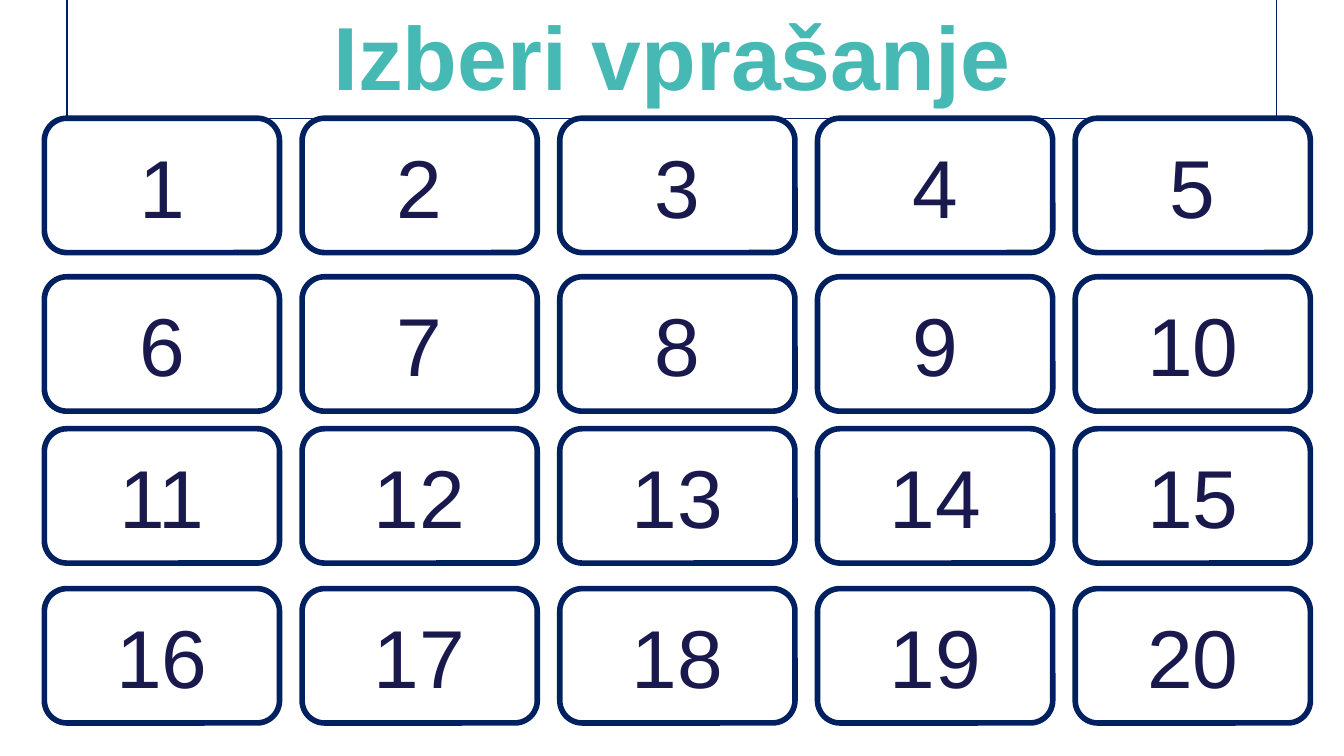
from pptx import Presentation
from pptx.dml.color import RGBColor
from pptx.enum.shapes import MSO_SHAPE
from pptx.enum.text import MSO_ANCHOR, PP_ALIGN
from pptx.util import Inches, Pt

COLUMNS = 5
FIRST_LEFT, LAST_LEFT = 0.33, 8
COLUMN_STEP = (LAST_LEFT - FIRST_LEFT) / (COLUMNS - 1)
ROW_TOPS = [0.88, 2.06, 3.19, 4.38]
CARD_WIDTH, CARD_HEIGHT = 1.75, 1


def color(value):
    return RGBColor.from_string(value)


class Board:
    font = "Arial"
    outline = "002060"
    title_format = {"size": Pt(48), "bold": True}
    title_color = "47B9B4"
    card_format = {"size": Pt(44), "bold": False}
    card_color = "19194D"

    def __init__(self, slide):
        self.slide = slide

    def box(self, kind, bounds, line_width, text, formats, text_color, wrap):
        """Add an unfilled, outlined shape with one centred line of text."""
        sp = self.slide.shapes.add_shape(kind, *map(Inches, bounds))
        sp.shadow.inherit = False
        sp.fill.background()
        sp.line.color.rgb = color(self.outline)
        sp.line.width = Pt(line_width)
        tf = sp.text_frame
        tf.word_wrap = wrap
        tf.vertical_anchor = MSO_ANCHOR.MIDDLE
        p = tf.paragraphs[0]
        p.alignment = PP_ALIGN.CENTER
        r = p.add_run()
        r.text = text
        r.font.name = self.font
        r.font.color.rgb = color(text_color)
        for name, value in formats.items():
            setattr(r.font, name, value)
        return sp

    def title(self, text):
        self.box(MSO_SHAPE.RECTANGLE, (0.5, -0.06, 9, 0.94), 0.75, text,
                 self.title_format, self.title_color, True)

    def card(self, left, top, number):
        sp = self.box(MSO_SHAPE.ROUNDED_RECTANGLE,
                      (left, top, CARD_WIDTH, CARD_HEIGHT), 3, str(number),
                      self.card_format, self.card_color, False)
        sp.adjustments[0] = 0.167


def main():
    prs = Presentation()
    prs.slide_width = Inches(10)
    prs.slide_height = prs.slide_width * 9 // 16
    board = Board(prs.slides.add_slide(prs.slide_layouts[6]))
    board.title("Izberi vprašanje")
    for row, top in enumerate(ROW_TOPS):
        for column in range(COLUMNS):
            board.card(FIRST_LEFT + column * COLUMN_STEP, top,
                       row * COLUMNS + column + 1)
    prs.save("out.pptx")


if __name__ == "__main__":
    main()
